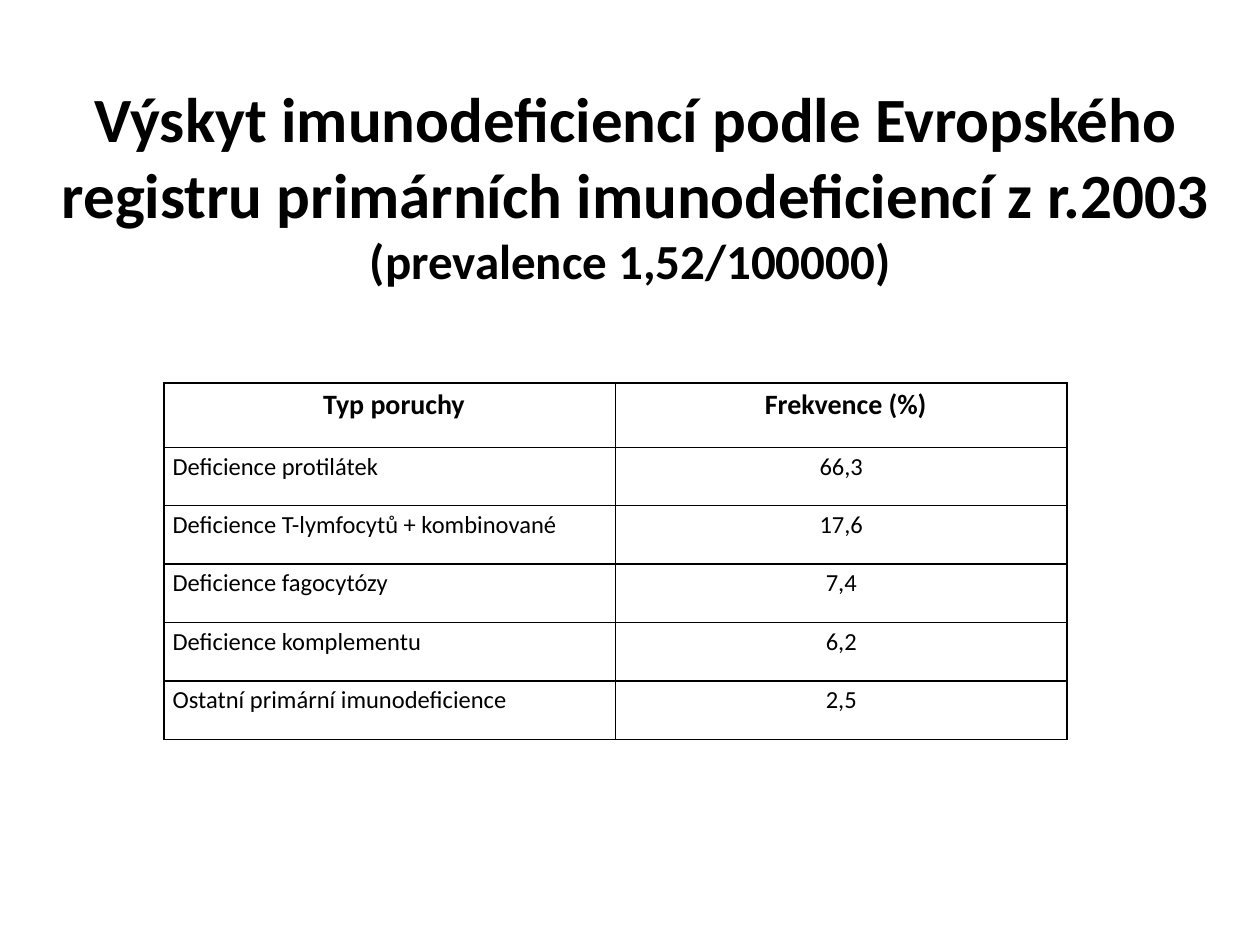
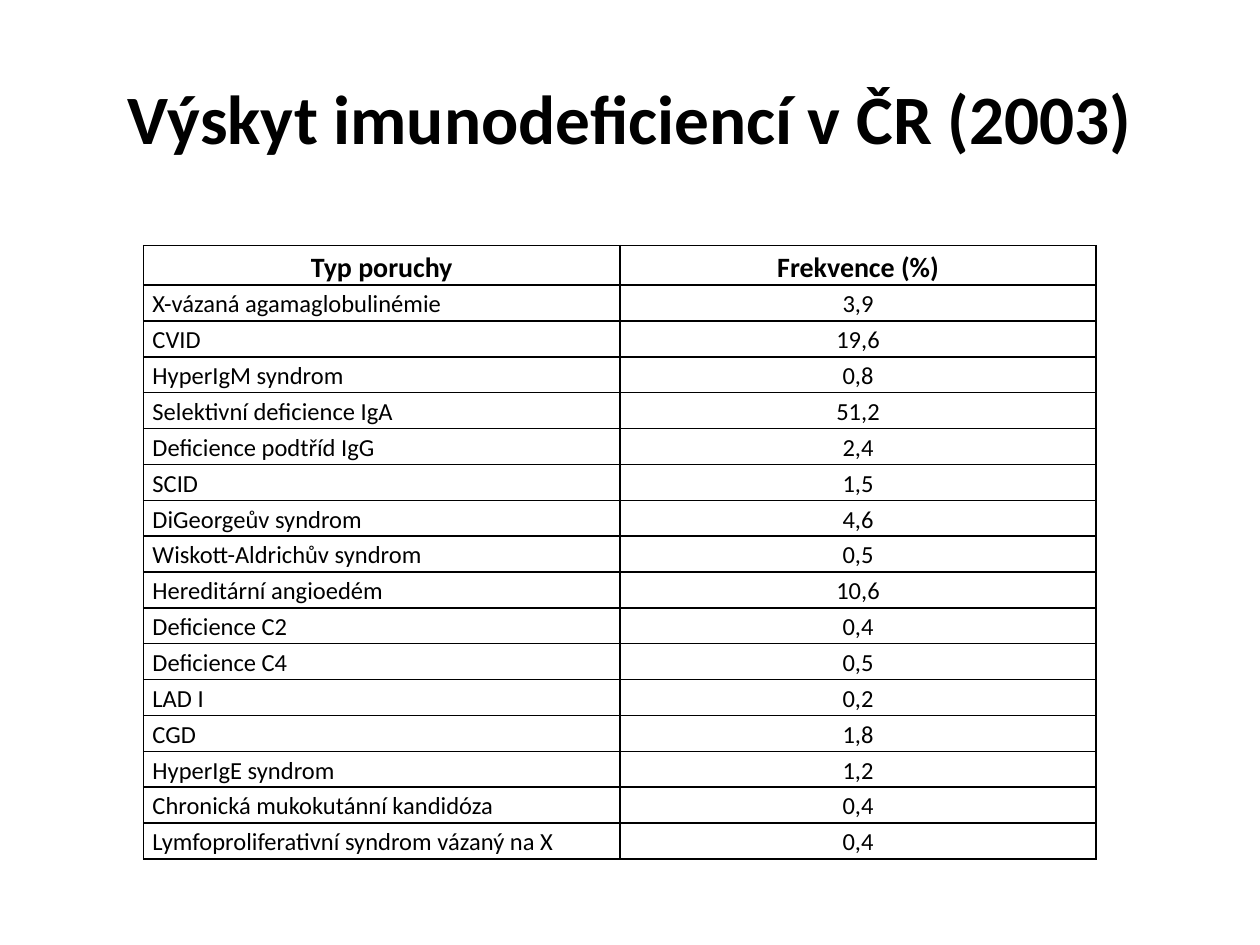
from dataclasses import dataclass

from lxml import etree
from pptx import Presentation
from pptx import util as u
from pptx.dml import color
from pptx.enum import text
from pptx.oxml import ns


@dataclass(frozen=True)
class Theme:
    font: str = "Calibri"
    ink: str = "000000"
    title_size: float = 36
    short_title_size: float = 39.6
    subtitle_size: float = 28
    header_size: float = 16
    body_size: float = 14
    border: float = 1
    cell_inset: float = 0.07


class Deck:
    def __init__(self, theme):
        self.theme = theme
        self.prs = Presentation()
        self.prs.slide_width = u.Inches(10)
        self.prs.slide_height = u.Inches(7.5)
        self.slide = None

    def add_run(self, paragraph, words, size, bold=False):
        run = paragraph.add_run()
        run.text = words
        run.font.name = self.theme.font
        run.font.size = u.Pt(size)
        run.font.bold = bold
        run.font.color.rgb = color.RGBColor.from_string(self.theme.ink)

    def add_slide(self, box, title_runs):
        """Start a slide; title_runs holds (words, size) pairs."""
        self.slide = self.prs.slides.add_slide(self.prs.slide_layouts[5])
        title = self.slide.shapes.title
        title.left, title.top, title.width, title.height = map(u.Inches, box)
        frame = title.text_frame
        frame.auto_size = text.MSO_AUTO_SIZE.NONE
        frame.word_wrap = True
        frame.vertical_anchor = text.MSO_ANCHOR.MIDDLE
        heading = frame.paragraphs[0]
        heading.alignment = text.PP_ALIGN.CENTER
        for words, size in title_runs:
            self.add_run(heading, words, size, bold=True)

    def add_borders(self, cell):
        properties = cell._tc.get_or_add_tcPr()
        for position, side in enumerate(("lnL", "lnR", "lnT", "lnB")):
            line = etree.Element(ns.qn(f"a:{side}"), w=str(u.Pt(self.theme.border)))
            fill = etree.SubElement(line, ns.qn("a:solidFill"))
            etree.SubElement(fill, ns.qn("a:srgbClr"), val=self.theme.ink)
            properties.insert(position, line)

    def fill_cell(self, cell, words, centred, header, inset, indent):
        cell.fill.background()
        self.add_borders(cell)
        cell.margin_left = cell.margin_right = u.Inches(inset)
        cell.margin_top = cell.margin_bottom = 0
        paragraph = cell.text_frame.paragraphs[0]
        paragraph.alignment = text.PP_ALIGN.CENTER if centred else text.PP_ALIGN.LEFT
        paragraph.line_spacing = 1.15
        paragraph.space_after = u.Pt(10)
        if indent:
            paragraph._p.get_or_add_pPr().set("marL", str(u.Inches(indent)))
        size = self.theme.header_size if header else self.theme.body_size
        self.add_run(paragraph, words, size, bold=header)

    def add_frequency_table(self, box, header_height, disorders,
                            header_inset=None, header_indent=0):
        left, top, width, height = box
        rows = [("Typ poruchy", "Frekvence (%)"), *disorders]
        table = self.slide.shapes.add_table(len(rows), 2, *map(u.Inches, box)).table
        table.first_row = table.horz_banding = False
        for column in table.columns:
            column.width = u.Inches(width / 2)
        body_height = (height - header_height) / len(disorders)
        for r, row in enumerate(rows):
            header = r == 0
            table.rows[r].height = u.Inches(header_height if header else body_height)
            inset = header and header_inset or self.theme.cell_inset
            for c, words in enumerate(row):
                self.fill_cell(table.cell(r, c), words, header or c == 1, header,
                               inset, header_indent if header else 0)


EUROPEAN_REGISTRY = [
    ("Deficience protilátek", "66,3"),
    ("Deficience T-lymfocytů + kombinované", "17,6"),
    ("Deficience fagocytózy", "7,4"),
    ("Deficience komplementu", "6,2"),
    ("Ostatní primární imunodeficience", "2,5"),
]

CZECH_REGISTRY = [
    ("X-vázaná agamaglobulinémie", "3,9"),
    ("CVID", "19,6"),
    ("HyperIgM syndrom", "0,8"),
    ("Selektivní deficience IgA", "51,2"),
    ("Deficience podtříd IgG", "2,4"),
    ("SCID", "1,5"),
    ("DiGeorgeův syndrom", "4,6"),
    ("Wiskott-Aldrichův syndrom", "0,5"),
    ("Hereditární angioedém", "10,6"),
    ("Deficience C2", "0,4"),
    ("Deficience C4", "0,5"),
    ("LAD I", "0,2"),
    ("CGD", "1,8"),
    ("HyperIgE syndrom", "1,2"),
    ("Chronická mukokutánní kandidóza", "0,4"),
    ("Lymfoproliferativní syndrom vázaný na X", "0,4"),
]


def main():
    theme = Theme()
    deck = Deck(theme)

    # Europe
    deck.add_slide((0.28, 0.84, 9.53, 1.25), [
        ("Výskyt imunodeficiencí podle Evropského registru primárních "
         "imunodeficiencí z r.2003 ", theme.title_size),
        ("(prevalence 1,52/100000) ", theme.subtitle_size),
    ])
    deck.add_frequency_table((1.3, 3.04, 7.17, 2.83), 0.51, EUROPEAN_REGISTRY,
                             header_inset=0.05, header_indent=0.07)

    # Czech Republic
    deck.add_slide((0.5, 0.3, 9, 1.25), [
        ("Výskyt imunodeficiencí v ČR (2003)", theme.short_title_size),
    ])
    deck.add_frequency_table((1.14, 1.95, 7.56, 4.87), 0.31, CZECH_REGISTRY)

    deck.prs.save("out.pptx")


if __name__ == "__main__":
    main()
